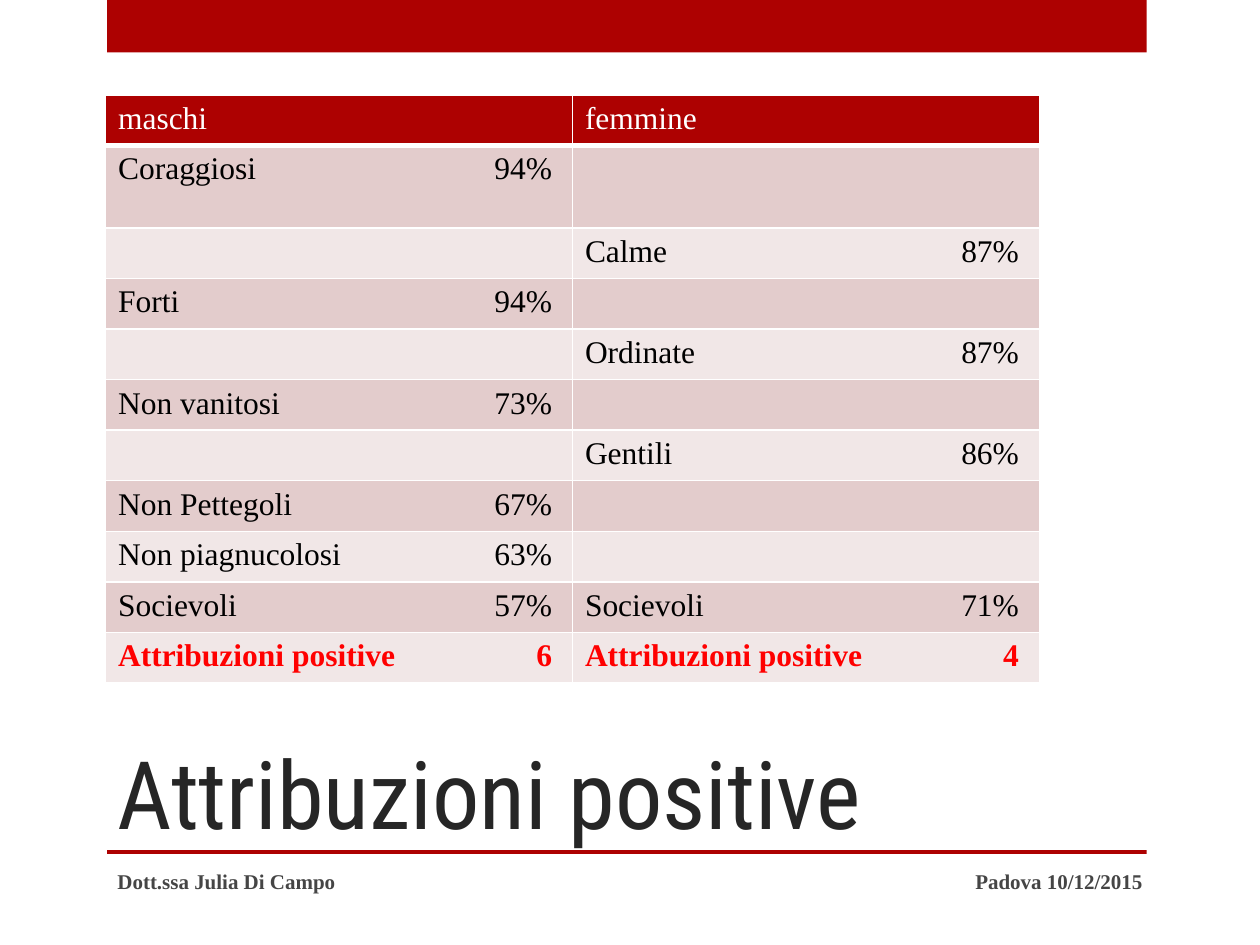
from dataclasses import dataclass

from lxml import etree
from pptx import Presentation
from pptx import util as u
from pptx.dml.color import RGBColor
from pptx.enum import shapes, text
from pptx.oxml import ns

COLORS = {
    "red": "AD0101", "title": "262626", "footer": "454545", "white": "FFFFFF",
    "black": "000000", "total": "FF0000", "odd": "E3CCCC", "even": "F1E7E7",
}
SERIF = "Times New Roman"
ROW_HEIGHT, TALL_ROW_HEIGHT = 28.9, 47.2
COLUMN_WIDTH = 266.8
VALUE_TAB = 248


@dataclass(frozen=True)
class Band:
    top: float
    height: float


@dataclass(frozen=True)
class Label:
    words: str
    left: float
    top: float
    width: float
    height: float
    size: float
    color: str
    font: str = SERIF
    bold: bool = False
    align: text.PP_ALIGN = text.PP_ALIGN.LEFT
    anchor: text.MSO_ANCHOR = text.MSO_ANCHOR.MIDDLE
    bottom_inset: float = 3.6


BANDS = [Band(0, 30), Band(485.8, 2.2)]
LABELS = [
    Label("Attribuzioni positive", 60, 360, 534, 126, 54, "title",
          font="Roboto Condensed", anchor=text.MSO_ANCHOR.BOTTOM, bottom_inset=1),
    Label("Padova 10/12/2015", 492, 489, 168, 28.8, 12, "footer",
          bold=True, align=text.PP_ALIGN.RIGHT),
    Label("Dott.ssa Julia Di Campo", 60, 489, 384, 28.8, 12, "footer", bold=True),
]
# Each entry is a trait and its value, tab-separated
ROWS = [
    ("maschi", "femmine"),
    ("Coraggiosi\t94%", ""),
    ("", "Calme\t87%"),
    ("Forti\t94%", ""),
    ("", "Ordinate\t87%"),
    ("Non vanitosi\t73%", ""),
    ("", "Gentili\t86%"),
    ("Non Pettegoli\t67%", ""),
    ("Non piagnucolosi\t63%", ""),
    ("Socievoli\t57%", "Socievoli\t71%"),
    ("Attribuzioni positive\t6", "Attribuzioni positive\t4"),
]


def rgb(key: str) -> RGBColor:
    return RGBColor.from_string(COLORS[key])


def style(paragraph, font: str, size: float, color: str, bold: bool) -> None:
    paragraph.font.name = font
    paragraph.font.size = u.Pt(size)
    paragraph.font.bold = bold
    paragraph.font.color.rgb = rgb(color)


def draw_band(slide, band: Band) -> None:
    bar = slide.shapes.add_shape(shapes.MSO_SHAPE.RECTANGLE, u.Pt(61.2), u.Pt(band.top),
                                 u.Pt(594), u.Pt(band.height))
    bar.shadow.inherit = False
    bar.fill.solid()
    bar.fill.fore_color.rgb = rgb("red")
    bar.line.fill.background()


def draw_label(slide, label: Label) -> None:
    box = slide.shapes.add_textbox(u.Pt(label.left), u.Pt(label.top),
                                   u.Pt(label.width), u.Pt(label.height))
    frame = box.text_frame
    frame.word_wrap = True
    frame.vertical_anchor = label.anchor
    frame.margin_bottom = u.Pt(label.bottom_inset)
    paragraph = frame.paragraphs[0]
    paragraph.text = label.words
    paragraph.alignment = label.align
    style(paragraph, label.font, label.size, label.color, label.bold)


def add_value_tab(paragraph) -> None:
    """Right-aligned tab stop that lines up the values of a column."""
    tabs = etree.Element(ns.qn("a:tabLst"))
    etree.SubElement(tabs, ns.qn("a:tab"), pos=str(u.Pt(VALUE_TAB)), algn="r")
    paragraph._p.get_or_add_pPr().insert(0, tabs)


def set_borders(cell, top: float, bottom: float) -> None:
    properties = cell._tc.get_or_add_tcPr()
    widths = {"a:lnL": 1, "a:lnR": 1, "a:lnT": top, "a:lnB": bottom}
    for place, (tag, width) in enumerate(widths.items()):
        line = etree.Element(ns.qn(tag), w=str(u.Pt(width)))
        fill = etree.SubElement(line, ns.qn("a:solidFill"))
        etree.SubElement(fill, ns.qn("a:srgbClr"), val=COLORS["white"])
        properties.insert(place, line)


def draw_table(slide) -> None:
    heights = [TALL_ROW_HEIGHT if row == 1 else ROW_HEIGHT for row in range(len(ROWS))]
    table = slide.shapes.add_table(len(ROWS), 2, u.Pt(60.3), u.Pt(54.2),
                                   u.Pt(2 * COLUMN_WIDTH), u.Pt(sum(heights))).table
    for column in table.columns:
        column.width = u.Pt(COLUMN_WIDTH)
    for row, entries in enumerate(ROWS):
        table.rows[row].height = u.Pt(heights[row])
        header, total = row == 0, row == len(ROWS) - 1
        fill = "red" if header else "odd" if row % 2 else "even"
        color = "white" if header else "total" if total else "black"
        for column, entry in enumerate(entries):
            cell = table.cell(row, column)
            cell.fill.solid()
            cell.fill.fore_color.rgb = rgb(fill)
            set_borders(cell, top=3 if row == 1 else 1, bottom=3 if header else 1)
            paragraph = cell.text_frame.paragraphs[0]
            paragraph.text = entry
            style(paragraph, SERIF, 18, color, total)
            if "\t" in entry:
                add_value_tab(paragraph)


def main() -> None:
    deck = Presentation()
    deck.slide_width, deck.slide_height = u.Pt(720), u.Pt(540)
    slide = deck.slides.add_slide(deck.slide_layouts[6])
    # Red bands above and below the content
    for band in BANDS:
        draw_band(slide, band)
    # Title and footers
    for label in LABELS:
        draw_label(slide, label)
    # Positive attributions by gender
    draw_table(slide)
    deck.save("out.pptx")


if __name__ == "__main__":
    main()
